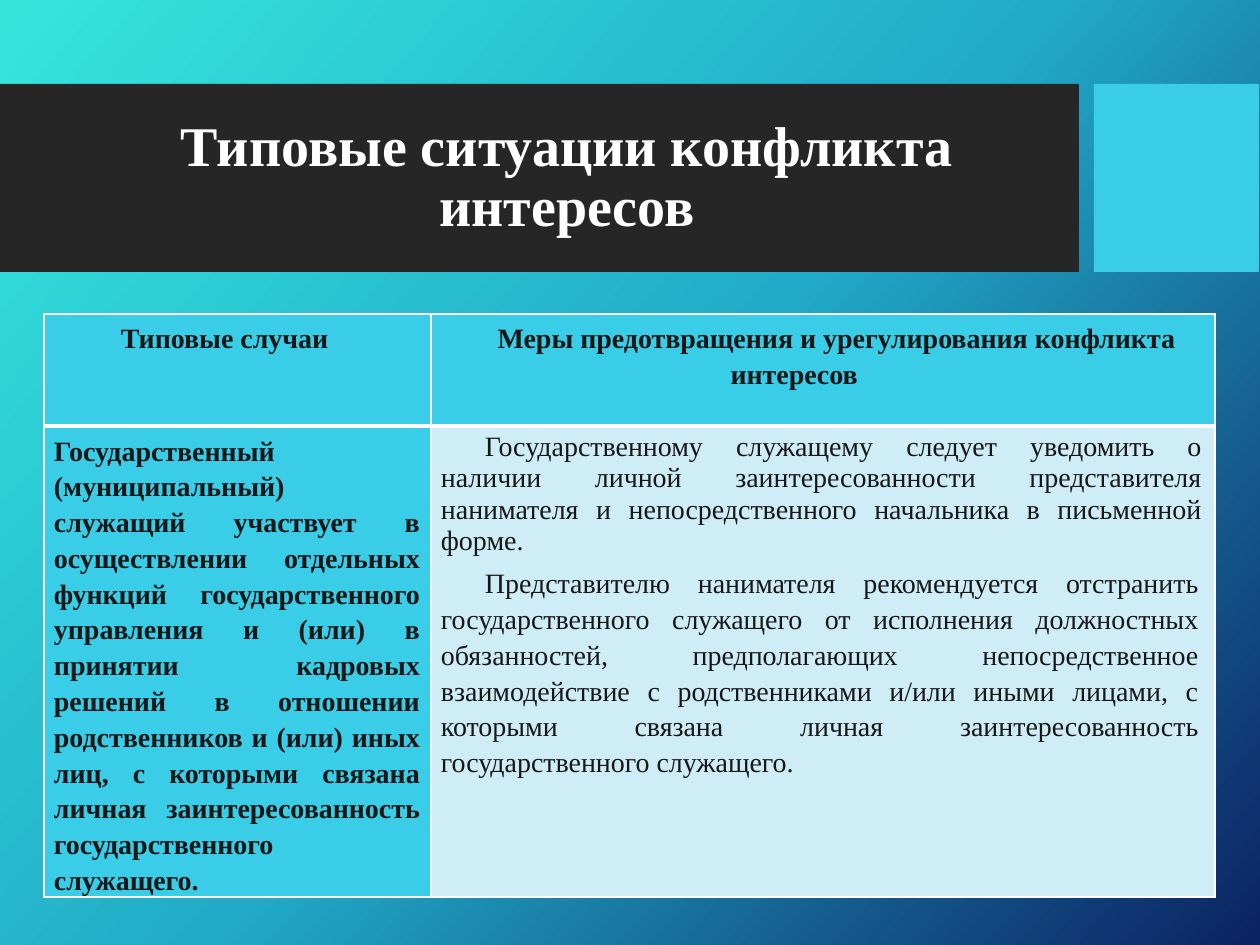
import pptx
import pptx.util
import pptx.dml.color
import pptx.enum.shapes
import pptx.enum.text
import lxml.etree

# Content
TITLE = "Типовые ситуации конфликта интересов"
HEAD = [("Типовые случаи", 53),
        ("Меры предотвращения и урегулирования конфликта интересов \t", 0)]
CASE = ("Государственный (муниципальный) служащий участвует в осуществлении "
        "отдельных функций государственного управления и (или) в принятии "
        "кадровых решений в отношении родственников и (или) иных лиц, с которыми "
        "связана личная заинтересованность государственного служащего.")
STEPS = [
    ("Государственному служащему следует уведомить о наличии личной "
     "заинтересованности представителя нанимателя и непосредственного "
     "начальника в письменной форме. ", 2, 1.01),
    ("Представителю нанимателя рекомендуется отстранить государственного "
     "служащего от исполнения должностных обязанностей, предполагающих "
     "непосредственное взаимодействие с родственниками и/или иными лицами, "
     "с которыми связана личная заинтересованность государственного служащего.",
     5, 1.15),
]

# Style
COLOR = {"dark": "262626", "cyan": "39CDE7", "pale": "CEEDF6",
         "text": "181717", "white": "FFFFFF"}
GRAD = [(0, "36E6DD"), (50, "21ABC8"), (100, "0C2263")]
FONT = "Times New Roman"
BARS = [(0, 1079, "dark"), (1094, 165, "cyan")]
BAR_TOP, BAR_H = 84, 188
COLS, ROWS = [387, 784], [112, 471]
NS = "http://schemas.openxmlformats.org/drawingml/2006/main"
PNS = "http://schemas.openxmlformats.org/presentationml/2006/main"
ALIGN = pptx.enum.text.PP_ALIGN
ANCHOR = pptx.enum.text.MSO_ANCHOR


def px(n):
    return pptx.util.Emu(round(n * 914400 / 126))


def rgb(name):
    return pptx.dml.color.RGBColor.from_string(COLOR[name])


def paint(item, name):
    item.fill.solid()
    item.fill.fore_color.rgb = rgb(name)


def write(para, text, size, color, bold, align, lead):
    para.alignment = align
    para.line_spacing = lead
    run = para.add_run()
    run.text = text
    run.font.name = FONT
    run.font.size = pptx.util.Pt(size)
    run.font.bold = bold
    run.font.color.rgb = rgb(color)


def indent(para, left, first, right):
    prop = para._p.get_or_add_pPr()
    for key, n in [("marL", left), ("marR", right), ("indent", first)]:
        prop.set(key, str(px(n)))


def border(cell, top, base):
    prop = cell._tc.get_or_add_tcPr()
    for i, (side, wide) in enumerate([("L", 1), ("R", 1), ("T", top), ("B", base)]):
        prop.insert(i, lxml.etree.fromstring(
            f'<a:ln{side} xmlns:a="{NS}" w="{wide * 12700}"><a:solidFill>'
            f'<a:srgbClr val="{COLOR["white"]}"/></a:solidFill></a:ln{side}>'))


prs = pptx.Presentation()
prs.slide_width, prs.slide_height = px(1260), px(945)
slide = prs.slides.add_slide(prs.slide_layouts[5])

# Gradient background
stops = "".join(f'<a:gs pos="{pos * 1000}"><a:srgbClr val="{col}"/></a:gs>'
                for pos, col in GRAD)
back = lxml.etree.fromstring(
    f'<p:bg xmlns:p="{PNS}" xmlns:a="{NS}"><p:bgPr><a:gradFill rotWithShape="1">'
    f'<a:gsLst>{stops}</a:gsLst><a:lin ang="{42 * 60000}" scaled="0"/>'
    '</a:gradFill><a:effectLst/></p:bgPr></p:bg>')
slide._element.cSld.insert(0, back)

# Title band
for left, wide, name in BARS:
    bar = slide.shapes.add_shape(pptx.enum.shapes.MSO_SHAPE.RECTANGLE,
                                 px(left), px(BAR_TOP), px(wide), px(BAR_H))
    bar.shadow.inherit = False
    paint(bar, name)
    bar.line.fill.background()

# Table
table = slide.shapes.add_table(2, 2, px(44), px(314),
                               px(sum(COLS)), px(sum(ROWS))).table
for col, wide in zip(table.columns, COLS):
    col.width = px(wide)
for row, high in zip(table.rows, ROWS):
    row.height = px(high)
for r in range(2):
    for c in range(2):
        cell = table.cell(r, c)
        cell.margin_left, cell.margin_top = px(10), px(5)
        cell.margin_right, cell.margin_bottom = px(11), 0
        paint(cell, "pale" if r and c else "cyan")
        border(cell, *((3, 1) if r else (1, 3)))

for c, (text, right) in enumerate(HEAD):
    para = table.cell(0, c).text_frame.paragraphs[0]
    indent(para, 5, 23, right)
    write(para, text, 16, "text", True, ALIGN.CENTER, 1.15)

case = table.cell(1, 0)
case.vertical_anchor = ANCHOR.MIDDLE
write(case.text_frame.paragraphs[0], CASE, 16, "text", True, ALIGN.JUSTIFY, 1.15)

frame = table.cell(1, 1).text_frame
first, second = frame.paragraphs[0], frame.add_paragraph()
for para, (text, right, lead) in zip([first, second], STEPS):
    indent(para, 0, 44, right)
    write(para, text, 16, "text", False, ALIGN.JUSTIFY, lead)
first.space_after = pptx.util.Pt(4.3)

# Title, raised above the band
title = slide.shapes.title
title.left, title.top, title.width, title.height = px(70), px(104), px(994), px(149)
title.text_frame.vertical_anchor = ANCHOR.MIDDLE
title.text_frame.word_wrap = True
write(title.text_frame.paragraphs[0], TITLE, 32, "white", True, ALIGN.CENTER, 0.9)
slide.shapes._spTree.append(title._element)

prs.save("out.pptx")
